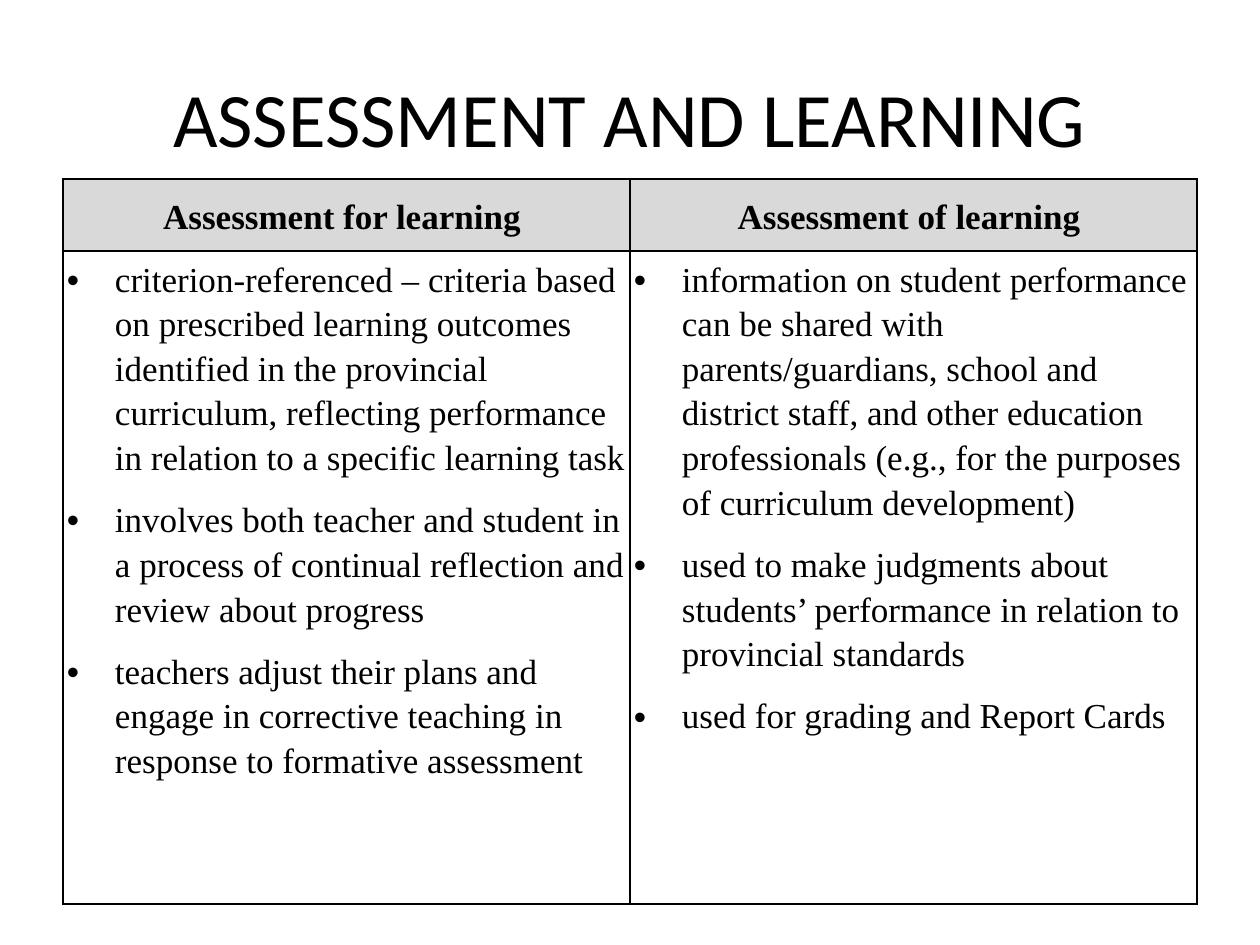
from dataclasses import dataclass

from lxml.etree import SubElement
from pptx import Presentation
from pptx.dml.color import RGBColor as Rgb
from pptx.enum.text import MSO_ANCHOR as Anchor, PP_ALIGN as Align
from pptx.oxml.ns import qn
from pptx.util import Emu, Pt

EMU_PER_PX = 914400 // 126


@dataclass(frozen=True)
class Theme:
    ink: str = "000000"
    header_fill: str = "D9D9D9"
    title_font: str = "Calibri"
    table_font: str = "Times New Roman"
    title_size: int = 44
    table_size: int = 20
    line_spacing: float = 1.15
    bullet_gap: int = 10
    border_width: int = 1


THEME = Theme()

COLUMNS = {
    "Assessment for learning ": [
        "criterion-referenced – criteria based on prescribed learning outcomes "
        "identified in the provincial curriculum, reflecting performance in "
        "relation to a specific learning task",
        "involves both teacher and student in a process of continual "
        "reflection and review about progress",
        "teachers adjust their plans and engage in corrective teaching in "
        "response to formative assessment",
    ],
    "Assessment of learning ": [
        "information on student performance can be shared with "
        "parents/guardians, school and district staff, and other education "
        "professionals (e.g., for the purposes of curriculum development)",
        "used to make judgments about students’ performance in relation to "
        "provincial standards",
        "used for grading and Report Cards",
    ],
}


def px(length):
    return Emu(length * EMU_PER_PX)


def write(paragraph, text, *, font=THEME.table_font, size=THEME.table_size,
          bold=False, align=Align.LEFT, spacing=THEME.line_spacing, after=0):
    paragraph.alignment = align
    paragraph.line_spacing = spacing
    paragraph.space_after = Pt(after)
    run = paragraph.add_run()
    run.text = text
    run.font.name = font
    run.font.size = Pt(size)
    run.font.bold = bold
    run.font.color.rgb = Rgb.from_string(THEME.ink)


def add_bullet(paragraph, indent=48):
    properties = paragraph._p.get_or_add_pPr()
    properties.set("marL", str(px(indent)))
    properties.set("indent", str(-px(indent)))
    SubElement(properties, qn("a:buFont"), typeface="Arial")
    SubElement(properties, qn("a:buChar"), char="•")


def add_borders(cell):
    properties = cell._tc.get_or_add_tcPr()
    for side in ("lnL", "lnR", "lnT", "lnB"):
        line = SubElement(properties, qn(f"a:{side}"), w=str(Pt(THEME.border_width)))
        fill = SubElement(line, qn("a:solidFill"))
        SubElement(fill, qn("a:srgbClr"), val=THEME.ink)


def style_cell(cell, anchor, fill=None, inset=4):
    cell.margin_left = cell.margin_right = px(inset)
    cell.margin_top = cell.margin_bottom = px(inset)
    cell.vertical_anchor = anchor
    add_borders(cell)
    if fill:
        cell.fill.solid()
        cell.fill.fore_color.rgb = Rgb.from_string(fill)
    else:
        cell.fill.background()


def add_title(slide, text):
    frame = slide.shapes.add_textbox(px(63), px(38), px(1134), px(158)).text_frame
    frame.word_wrap = True
    frame.vertical_anchor = Anchor.MIDDLE
    write(frame.paragraphs[0], text, font=THEME.title_font,
          size=THEME.title_size, align=Align.CENTER, spacing=1.0)


def add_comparison(slide, columns, width=1134, row_heights=(72, 653)):
    table = slide.shapes.add_table(
        len(row_heights), len(columns),
        px(63), px(179), px(width), px(sum(row_heights))).table
    table.first_row = table.horz_banding = False
    for row, height in zip(table.rows, row_heights):
        row.height = px(height)

    for index, (heading, points) in enumerate(columns.items()):
        # Heading
        header = table.cell(0, index)
        style_cell(header, Anchor.MIDDLE, THEME.header_fill)
        write(header.text_frame.paragraphs[0], heading, bold=True, align=Align.CENTER)

        # Bulleted points
        body = table.cell(1, index)
        style_cell(body, Anchor.TOP)
        frame = body.text_frame
        for number, point in enumerate(points):
            paragraph = frame.add_paragraph() if number else frame.paragraphs[0]
            write(paragraph, point, after=THEME.bullet_gap)
            add_bullet(paragraph)


def main():
    deck = Presentation()
    deck.slide_width, deck.slide_height = px(1260), px(945)
    slide = deck.slides.add_slide(deck.slide_layouts[6])
    add_title(slide, "ASSESSMENT AND LEARNING")
    add_comparison(slide, COLUMNS)
    deck.save("out.pptx")


if __name__ == "__main__":
    main()
